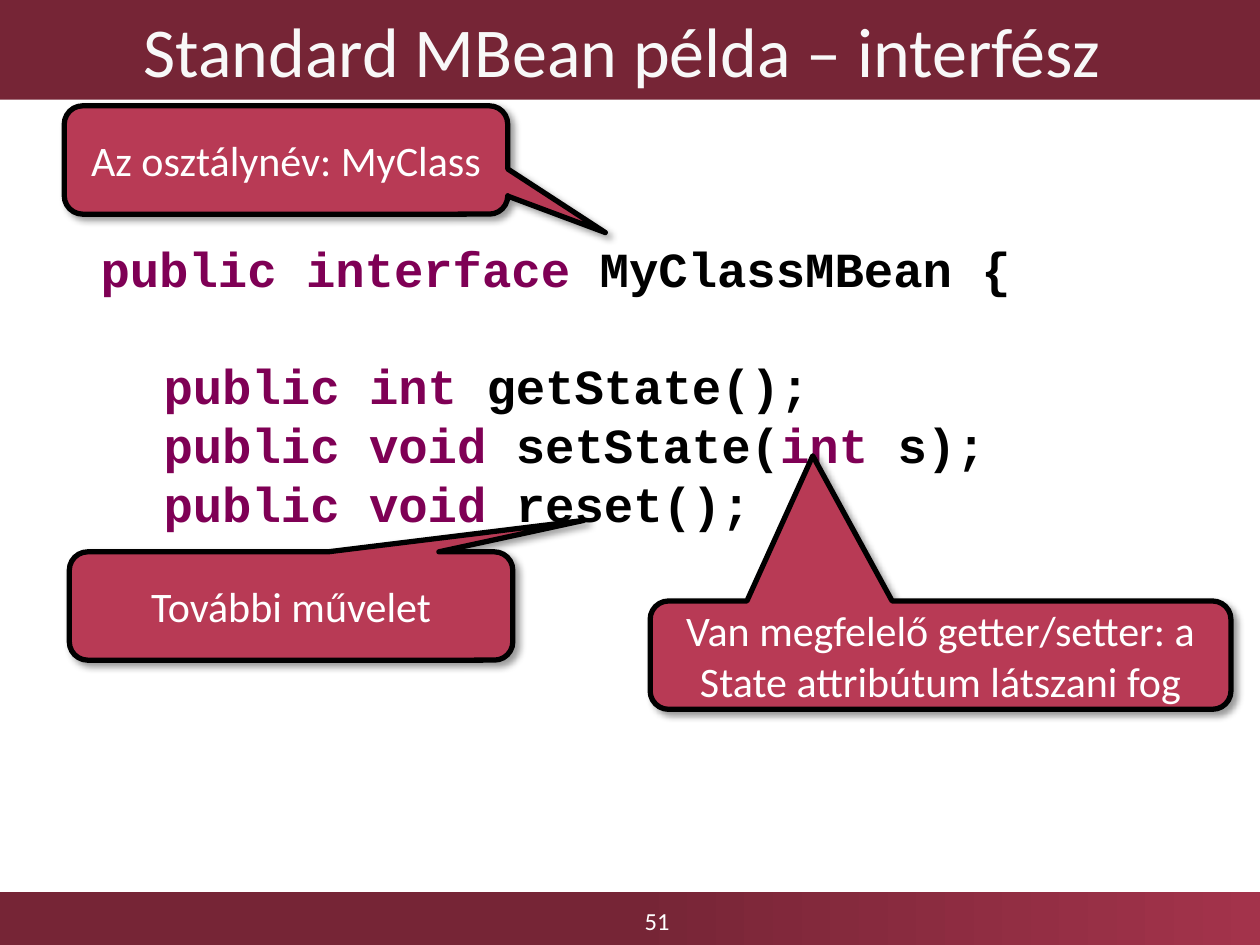
import pptx
import pptx.dml.color
import pptx.enum.shapes
import pptx.enum.text
import pptx.oxml
import pptx.oxml.ns
import pptx.util

Inches, Pt = pptx.util.Inches, pptx.util.Pt
SHAPE = pptx.enum.shapes.MSO_SHAPE
ANCHOR = pptx.enum.text.MSO_ANCHOR
ALIGN = pptx.enum.text.PP_ALIGN

COLORS = {
    "band": "762536",
    "band_end": "A3334B",
    "title": "F8F8F8",
    "white": "FFFFFF",
    "callout": "B83A55",
    "keyword": "7F0055",
    "black": "000000",
}

LINE_PITCH = 33.6

# Each line: space before in points, then (text, colour, bold) runs
CODE = [
    (0, [("public interface ", "keyword", True), ("MyClassMBean {", "black", True)]),
    (LINE_PITCH, [("\tpublic int ", "keyword", True), ("getState();", "black", True)]),
    (0, [("\tpublic void ", "keyword", True), ("setState(", "black", True),
         ("int", "keyword", True), (" s);", "black", True)]),
    (0, [("\tpublic void ", "keyword", True), ("reset();", "black", True)]),
    (LINE_PITCH, [("}", "black", False)]),
]

# Text, box, pointer tip relative to the box
CALLOUTS = [
    ("Az osztálynév: MyClass", (0.51, 0.84, 3.52, 0.86), (0.72, 0.67)),
    ("Van megfelelő getter/setter: a State attribútum látszani fog",
     (5.16, 4.77, 4.61, 0.86), (-0.22, -1.84)),
    ("További művelet", (0.55, 4.38, 3.52, 0.86), (0.66, -0.79)),
]


def rgb(name):
    return pptx.dml.color.RGBColor.from_string(COLORS[name])


def add_run(p, text, size, color, font="Calibri", bold=False):
    r = p.add_run()
    r.text = text
    r.font.size = Pt(size)
    r.font.name = font
    r.font.bold = bold
    r.font.color.rgb = rgb(color)


def set_centered(sp, text, size, color):
    tf = sp.text_frame
    tf.word_wrap = True
    tf.auto_size = pptx.enum.text.MSO_AUTO_SIZE.NONE
    tf.vertical_anchor = ANCHOR.MIDDLE
    p = tf.paragraphs[0]
    p.alignment = ALIGN.CENTER
    add_run(p, text, size, color)


def add_title(s, text):
    sp = s.shapes.title
    sp.left, sp.top, sp.width, sp.height = (Inches(v) for v in (0, 0, 10, 0.79))
    sp.fill.solid()
    sp.fill.fore_color.rgb = rgb("band")
    set_centered(sp, text, 40, "title")


def add_footer(s, number):
    sp = s.shapes.add_shape(SHAPE.RECTANGLE, Inches(0), Inches(7.08), Inches(10), Inches(0.42))
    sp.shadow.inherit = False
    sp.line.fill.background()
    sp.fill.gradient()
    sp.fill.gradient_angle = 0
    stops = [(0.5, "band"), (1, "band_end")]
    for stop, (position, color) in zip(sp.fill.gradient_stops, stops):
        stop.position = position
        stop.color.rgb = rgb(color)
    box = s.shapes.add_textbox(Inches(3.59), Inches(7.11), Inches(3.25), Inches(0.39))
    set_centered(box, number, 14, "white")


def add_code(s, lines):
    box = s.shapes.add_textbox(Inches(0.7), Inches(1.78), Inches(8.67), Inches(3.4))
    tf = box.text_frame
    tf.word_wrap = True
    tf.margin_top = Inches(0.11)
    for i, (space, runs) in enumerate(lines):
        p = tf.add_paragraph() if i else tf.paragraphs[0]
        p.line_spacing = Pt(LINE_PITCH)
        p.space_before = Pt(space)
        for text, color, bold in runs:
            add_run(p, text, 28, color, "Courier New", bold)


def add_shadow(sp):
    sp.shadow.inherit = False
    effects = sp._element.spPr.find(pptx.oxml.ns.qn("a:effectLst"))
    effects.append(pptx.oxml.parse_xml(
        f'<a:outerShdw {pptx.oxml.ns.nsdecls("a")} blurRad="{Pt(4)}" dist="{Pt(3)}" '
        f'dir="{45 * 60000}" algn="tl" rotWithShape="0">'
        f'<a:srgbClr val="{COLORS["black"]}"><a:alpha val="40000"/></a:srgbClr>'
        '</a:outerShdw>'))


def add_callout(s, text, box, tip):
    sp = s.shapes.add_shape(SHAPE.ROUNDED_RECTANGULAR_CALLOUT, *(Inches(v) for v in box))
    sp.adjustments[0], sp.adjustments[1] = tip
    sp.adjustments[2] = 0.17
    sp.fill.solid()
    sp.fill.fore_color.rgb = rgb("callout")
    sp.line.color.rgb = rgb("black")
    sp.line.width = Pt(3)
    add_shadow(sp)
    set_centered(sp, text, 24, "white")


def main():
    prs = pptx.Presentation()
    prs.slide_width, prs.slide_height = Inches(10), Inches(7.5)
    s = prs.slides.add_slide(prs.slide_layouts[5])

    # Title and footer bands
    add_footer(s, "51")
    add_title(s, "Standard MBean példa – interfész ")

    # Code with its explanations
    add_code(s, CODE)
    for text, box, tip in CALLOUTS:
        add_callout(s, text, box, tip)

    prs.save("out.pptx")


if __name__ == "__main__":
    main()
